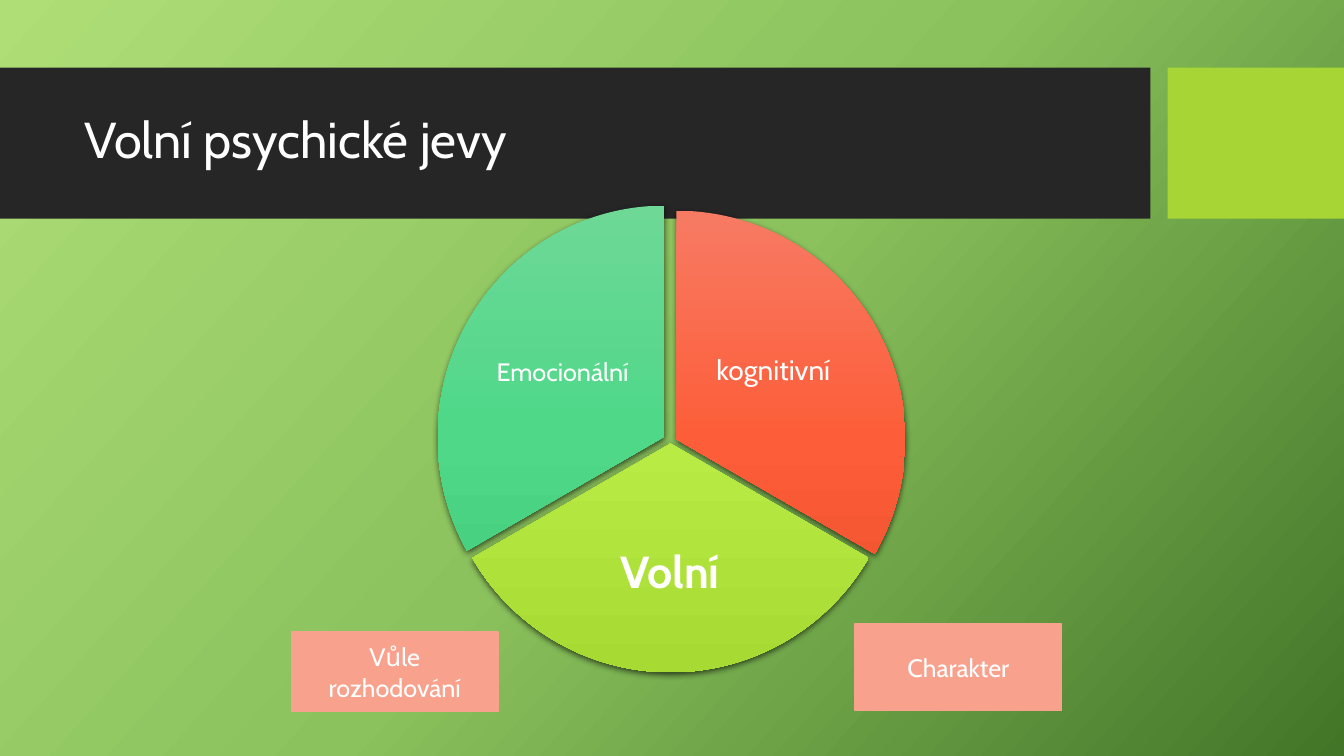
from dataclasses import dataclass

from lxml.etree import SubElement
from pptx import Presentation
from pptx.dml.color import RGBColor
from pptx.enum.shapes import MSO_SHAPE
from pptx.enum.text import MSO_ANCHOR, PP_ALIGN
from pptx.oxml import parse_xml
from pptx.oxml.ns import nsdecls, qn
from pptx.util import Inches, Pt

FONT = "Cabin"
COLOURS = {"band": "262626", "accent": "A7D535", "text": "FFFFFF", "note": "F8A28E"}
GRADIENTS = {
    "page": ("AFDE77", "8BC25D", "437528"),
    "cognitive": ("F77A63", "FD5E39", "EB4E29"),
    "volitional": ("BDE867", "B8EB43", "A7DA33"),
    "emotional": ("6ED897", "4ED888", "3EC778"),
}


@dataclass
class Area:
    left: float
    top: float
    width: float
    height: float

    def lengths(self):
        return [Inches(n) for n in (self.left, self.top, self.width, self.height)]


@dataclass
class Slice:
    gradient: str
    area: Area
    start: int
    end: int
    label: str
    label_area: Area
    size: int
    inset: float = 0.03
    bold: bool = False


@dataclass
class Note:
    text: str
    area: Area


BANDS = [
    (Area(0, 0.67, 11.41, 1.5), "band"),
    (Area(11.58, 0.67, 1.75, 1.5), "accent"),
]
# Angles run clockwise from three o'clock
SLICES = [
    Slice("cognitive", Area(4.44, 2.09, 4.54, 4.54), 270, 30,
          "kognitivní", Area(6.9, 2.93, 1.54, 1.51), 20),
    Slice("volitional", Area(4.38, 2.13, 4.54, 4.54), 30, 150,
          "Volní", Area(5.62, 4.99, 2.05, 1.4), 32, 0.04, True),
    Slice("emotional", Area(4.34, 2.04, 4.49, 4.59), 150, 270,
          "Emocionální", Area(4.82, 2.94, 1.52, 1.53), 18),
]
NOTES = [
    Note("Vůle\nrozhodování", Area(2.89, 6.27, 2.05, 0.79)),
    Note("Charakter", Area(8.48, 6.19, 2.05, 0.86)),
]


def rgb(name: str) -> RGBColor:
    return RGBColor.from_string(COLOURS[name])


def set_gradient(fill, element, name: str, angle: int) -> None:
    """Fill with three even stops at a clockwise angle."""
    fill.gradient()
    fill.gradient_angle = 360 - angle
    stops = element.find(".//" + qn("a:gsLst"))
    for stop in list(stops):
        stops.remove(stop)
    for index, colour in enumerate(GRADIENTS[name]):
        stop = SubElement(stops, qn("a:gs"), pos=str(index * 50000))
        SubElement(stop, qn("a:srgbClr"), val=colour)


def add_shadow(shape) -> None:
    shape.shadow.inherit = False
    shape._element.spPr.find(qn("a:effectLst")).append(parse_xml(
        f'<a:outerShdw {nsdecls("a")} blurRad="{Pt(4.5)}" dist="{Pt(1.5)}" '
        'dir="5400000" algn="ctr" rotWithShape="0"><a:srgbClr val="000000">'
        '<a:alpha val="63000"/></a:srgbClr></a:outerShdw>'))


def write(box, text: str, size: int, align=PP_ALIGN.CENTER,
          spacing: float = 1.0, bold: bool = False) -> None:
    frame = box.text_frame
    frame.text = text
    frame.word_wrap = True
    frame.vertical_anchor = MSO_ANCHOR.MIDDLE
    for para in frame.paragraphs:
        para.alignment = align
        para.line_spacing = spacing
        for span in para.runs:
            span.font.name = FONT
            span.font.size = Pt(size)
            span.font.bold = bold
            span.font.color.rgb = rgb("text")


def add_rectangle(page, area: Area, colour: str):
    shape = page.shapes.add_shape(MSO_SHAPE.RECTANGLE, *area.lengths())
    shape.shadow.inherit = False
    shape.fill.solid()
    shape.fill.fore_color.rgb = rgb(colour)
    shape.line.fill.background()
    return shape


def add_slice(page, part: Slice) -> None:
    wedge = page.shapes.add_shape(MSO_SHAPE.PIE, *part.area.lengths())
    # Preset angles count 60000 per degree, adjustments 100000 per unit
    wedge.adjustments[0] = part.start * 0.6
    wedge.adjustments[1] = part.end * 0.6
    set_gradient(wedge.fill, wedge._element, part.gradient, 90)
    wedge.line.fill.background()
    add_shadow(wedge)

    box = page.shapes.add_textbox(*part.label_area.lengths())
    frame = box.text_frame
    frame.margin_left = frame.margin_right = Inches(part.inset)
    frame.margin_top = frame.margin_bottom = Inches(part.inset)
    write(box, part.label, part.size, spacing=0.9, bold=part.bold)


def add_note(page, note: Note) -> None:
    box = add_rectangle(page, note.area, "note")
    box.line.color.rgb = rgb("note")
    box.line.width = Pt(1)
    write(box, note.text, 18)


def main() -> None:
    deck = Presentation()
    deck.slide_width, deck.slide_height = Inches(13.33), Inches(7.5)
    page = deck.slides.add_slide(deck.slide_layouts[5])
    set_gradient(page.background.fill, page._element, "page", 42)

    # Header bands, with the title in front of them
    for area, colour in BANDS:
        add_rectangle(page, area, colour)
    title = page.shapes.title
    page.shapes._spTree.append(title._element)
    title.left, title.top, title.width, title.height = Area(0.74, 0.82, 10.51, 1.18).lengths()
    write(title, "Volní psychické jevy", 36, PP_ALIGN.LEFT, 0.9)

    # Pie of mental phenomena and its notes
    for part in SLICES:
        add_slice(page, part)
    for note in NOTES:
        add_note(page, note)

    deck.save("out.pptx")


if __name__ == "__main__":
    main()
